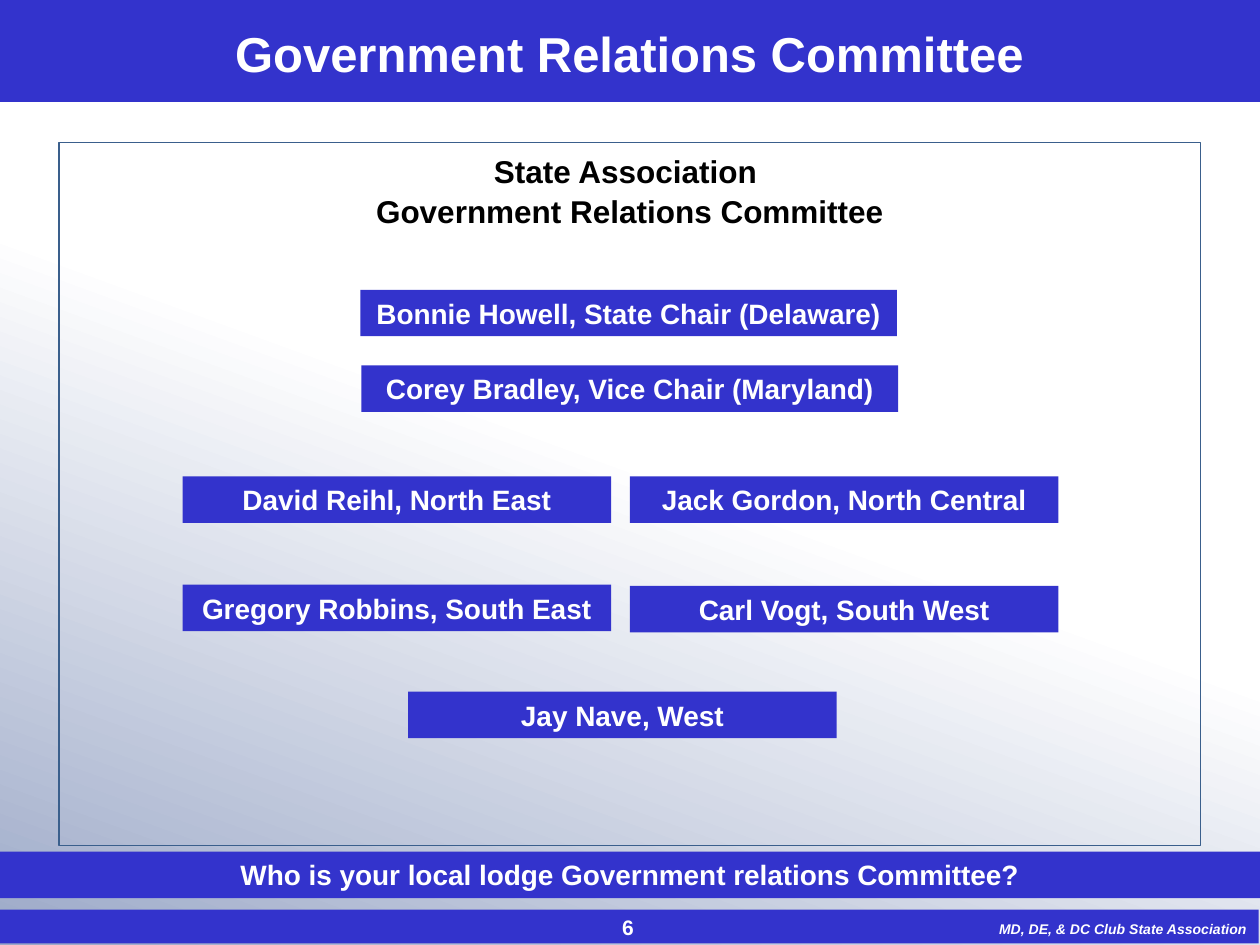
from pptx import Presentation
from pptx.dml.color import RGBColor
from pptx.enum.shapes import MSO_SHAPE
from pptx.enum.text import MSO_ANCHOR, PP_ALIGN
from pptx.util import Pt

# Content
TITLE = "Government Relations Committee"
HEADING = ["State Association ", "Government Relations Committee"]
OFFICERS = [
    # text, left, top
    ("Bonnie Howell, State Chair (Delaware)", 205.9, 165.6),
    ("Corey Bradley, Vice Chair (Maryland)", 206.6, 208.8),
]
REGIONS = [
    ("David Reihl, North East", 104.4, 272.2),
    ("Jack Gordon, North Central", 360, 272.2),
    ("Gregory Robbins, South East", 104.4, 334.1),
    ("Carl Vogt, South West", 360, 334.8),
    ("Jay Nave, West", 233.3, 395.3),
]
QUESTION = "Who is your local lodge Government relations Committee?"
NUMBER = "6"
FOOTER = "MD, DE, & DC Club State Association"

THEME = {
    "font": "Arial",
    "blue": RGBColor(0x33, 0x33, 0xCC),
    "frame": RGBColor(0x3A, 0x5F, 0x8C),
    "haze": RGBColor(0x9C, 0xA9, 0xC8),
    "white": RGBColor(0xFF, 0xFF, 0xFF),
    "black": RGBColor(0, 0, 0),
    "title": 28, "heading": 18, "name": 16, "number": 12, "footer": 8,
}
WIDTH, HEIGHT = 720, 540
OFFICER_W, REGION_W, BOX_H = 306.7, 244.8, 26.6


def add_box(slide, box, fill=None, line=None):
    sp = slide.shapes.add_shape(MSO_SHAPE.RECTANGLE, *map(Pt, box))
    sp.shadow.inherit = False
    if fill is None:
        sp.fill.background()
    else:
        sp.fill.solid()
        sp.fill.fore_color.rgb = fill
    if line is None:
        sp.line.fill.background()
    else:
        sp.line.color.rgb = line
        sp.line.width = Pt(0.75)
    return sp


def write(sp, lines, size, color="white", anchor=MSO_ANCHOR.MIDDLE,
          align=PP_ALIGN.CENTER, wrap=True, italic=False):
    tf = sp.text_frame
    tf.word_wrap = wrap
    tf.vertical_anchor = anchor
    for i, text in enumerate(lines):
        p = tf.paragraphs[0] if i == 0 else tf.add_paragraph()
        p.text = text
        p.alignment = align
        p.font.name = THEME["font"]
        p.font.size = Pt(THEME[size])
        p.font.bold = True
        p.font.italic = italic
        p.font.color.rgb = THEME[color]
    return tf


def add_text(slide, box, text, size, **style):
    write(slide.shapes.add_textbox(*map(Pt, box)), [text], size, **style)


def main():
    prs = Presentation()
    prs.slide_width, prs.slide_height = Pt(WIDTH), Pt(HEIGHT)
    slide = prs.slides.add_slide(prs.slide_layouts[6])

    # Background gradient, rising from the lower left
    fill = slide.background.fill
    fill.gradient()
    fill.gradient_angle = 70
    stops = (("haze", 0), ("white", 0.51))
    for stop, (color, position) in zip(fill.gradient_stops, stops):
        stop.color.rgb = THEME[color]
        stop.position = position

    # Title and footer bands
    add_box(slide, (0, 0, WIDTH, 58.3), THEME["blue"])
    add_box(slide, (-0.7, 519.8, WIDTH, 19.4), THEME["blue"])
    add_text(slide, (563.8, 522.7, 156.2, 17.3), FOOTER, "footer",
             anchor=MSO_ANCHOR.TOP, align=PP_ALIGN.LEFT, wrap=False, italic=True)
    add_text(slide, (53.3, 0, 612.7, 60), TITLE, "title")

    # Framed heading
    frame = add_box(slide, (33.8, 81.4, 652.3, 401.8), line=THEME["frame"])
    tf = write(frame, HEADING, "heading", "black", MSO_ANCHOR.TOP)
    tf.margin_top = Pt(5.5)
    tf.paragraphs[1].space_before = Pt(1)

    add_text(slide, (275, 519.8, 167.8, 20.2), NUMBER, "number")

    # Committee members
    for members, width in ((REGIONS, REGION_W), (OFFICERS, OFFICER_W)):
        for text, left, top in members:
            sp = add_box(slide, (left, top, width, BOX_H), THEME["blue"])
            write(sp, [text], "name", wrap=False)

    # Closing question
    sp = add_box(slide, (0, 486.7, WIDTH, BOX_H), THEME["blue"])
    write(sp, [QUESTION], "name", anchor=MSO_ANCHOR.TOP)

    prs.save("out.pptx")


if __name__ == "__main__":
    main()
